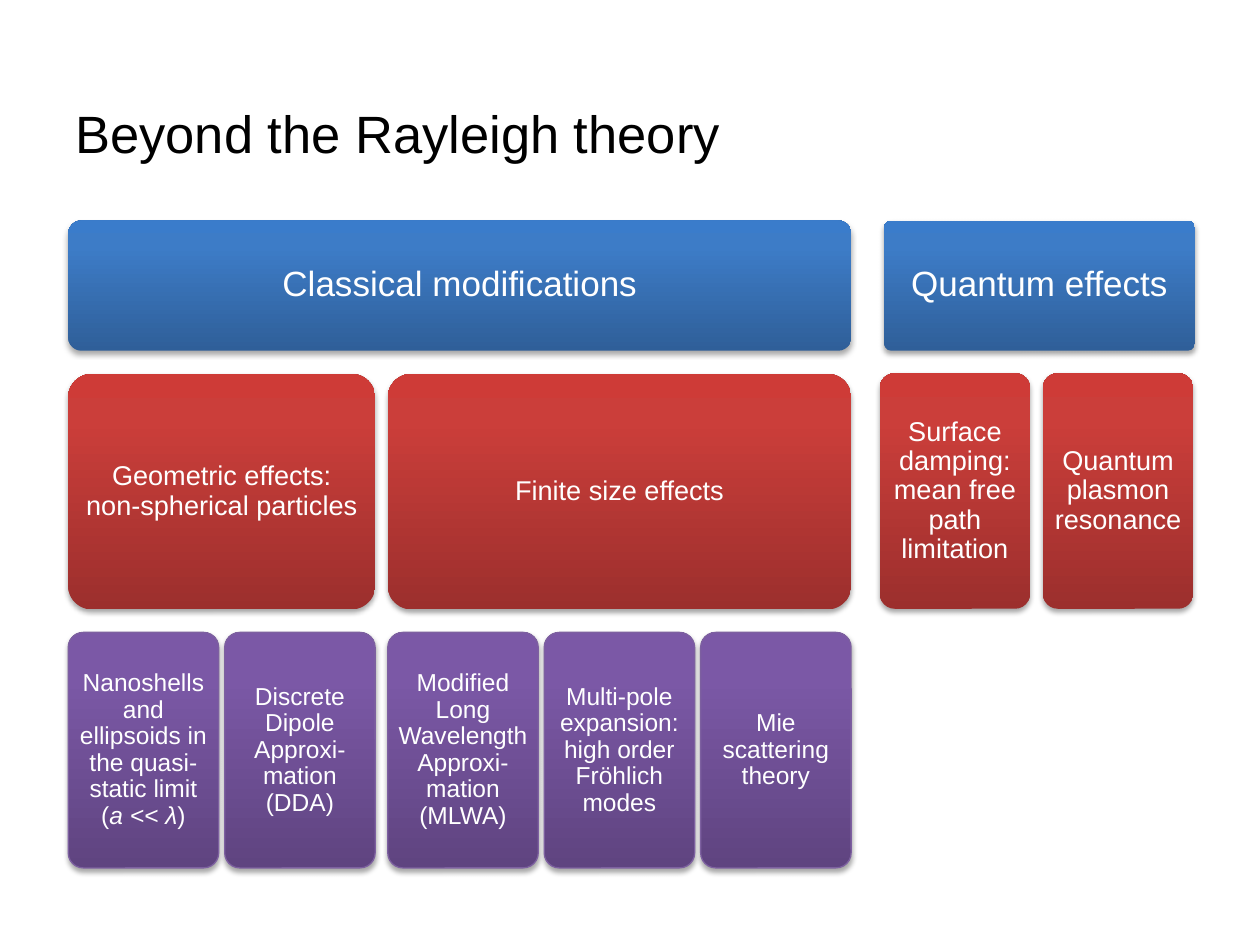
from dataclasses import dataclass
from copy import deepcopy
from lxml.etree import SubElement
from pptx import Presentation
from pptx.dml.color import RGBColor
from pptx.enum.shapes import MSO_SHAPE as Preset
from pptx.enum.text import MSO_ANCHOR as Anchor, PP_ALIGN as Align
from pptx.oxml.ns import qn
from pptx.util import Pt


@dataclass(frozen=True)
class Level:
    stops: tuple
    size: float
    margin: float
    outline: str = ""


@dataclass(frozen=True)
class Theme:
    font: str = "Arial"
    title_size: float = 30
    title_color: str = "000000"
    text_color: str = "FFFFFF"
    shadow_color: str = "000000"
    header: Level = Level(("2F5F99", "3D7CC7", "3A7CCB"), 20, 11.5)
    effect: Level = Level(("9C2F2D", "CB3E3A", "CE3B37"), 15.5, 7.9)
    narrow: Level = Level(("9C2F2D", "CB3E3A", "CE3B37"), 15.5, 6.5)
    method: Level = Level(("5F4480", "7B58A6", "7C57A8"), 14, 5.76, "7D60A0")


STOP_POSITIONS = (0, 0.8, 1)
TEXT_INSET_RATIO = 0.29


def apply(target, formats):
    for name, value in formats.items():
        setattr(target, name, value)


class HierarchySlide:
    def __init__(self, presentation, theme):
        self.theme = theme
        self.slide = presentation.slides.add_slide(presentation.slide_layouts[6])

    def label(self, shape, runs, size, color, align, margins=None, line_spacing=1.0):
        frame = shape.text_frame
        apply(frame, {"word_wrap": True, "vertical_anchor": Anchor.MIDDLE})
        apply(frame, margins or {})
        paragraph = frame.paragraphs[0]
        apply(paragraph, {"alignment": align, "line_spacing": line_spacing})
        for text, italic in runs:
            run = paragraph.add_run()
            run.text = text
            apply(run.font, {"name": self.theme.font, "size": Pt(size), "italic": italic})
            run.font.color.rgb = RGBColor.from_string(color)

    def title(self, text, left, top, width, height):
        shape = self.slide.shapes.add_textbox(Pt(left), Pt(top), Pt(width), Pt(height))
        self.label(shape, [(text, False)], self.theme.title_size,
                   self.theme.title_color, Align.LEFT)

    def gradient(self, shape, colors):
        shape.fill.gradient()
        shape.fill.gradient_angle = 90
        stop_list = next(shape._element.spPr.iter(qn("a:gsLst")))
        stop_list.append(deepcopy(stop_list[0]))
        for stop, position, color in zip(shape.fill.gradient_stops, STOP_POSITIONS, colors):
            stop.position = position
            stop.color.rgb = RGBColor.from_string(color)

    def shadow(self, shape):
        shape.shadow.inherit = False
        effects = shape._element.spPr.find(qn("a:effectLst"))
        outer = SubElement(effects, qn("a:outerShdw"), blurRad=str(Pt(3.1)),
                           dist=str(Pt(1.8)), dir="5400000", rotWithShape="0")
        color = SubElement(outer, qn("a:srgbClr"), val=self.theme.shadow_color)
        SubElement(color, qn("a:alpha"), val="35000")

    def box(self, runs, left, top, width, height, radius, level):
        shape = self.slide.shapes.add_shape(
            Preset.ROUNDED_RECTANGLE, Pt(left), Pt(top), Pt(width), Pt(height))
        shape.adjustments[0] = radius / min(width, height)
        self.gradient(shape, level.stops)
        if level.outline:
            shape.line.color.rgb = RGBColor.from_string(level.outline)
            shape.line.width = Pt(0.75)
        else:
            shape.line.fill.background()
        self.shadow(shape)
        margin = Pt(level.margin - TEXT_INSET_RATIO * radius)
        sides = ("left", "right", "top", "bottom")
        self.label(shape, runs, level.size, self.theme.text_color, Align.CENTER,
                   {f"margin_{side}": margin for side in sides}, 0.9)


def main():
    presentation = Presentation()
    apply(presentation, {"slide_width": Pt(720), "slide_height": Pt(540)})
    theme = Theme()
    page = HierarchySlide(presentation, theme)
    page.title("Beyond the Rayleigh theory", 36, 37.4, 648, 77)

    left, right = 39, 486.5
    header_top, effect_top, method_top = 126, 213.7, 361.4
    header_height, row_height = 74.4, 134.6
    method_width, method_pitch, branch_gap = 86, 89.4, 7.2
    method_radius = 8.6

    page.box([("Classical modifications", False)], left, header_top,
             right - left, header_height, 7.5, theme.header)

    branches = [
        ("Geometric effects: non-spherical particles", [
            [("Nanoshells and ellipsoids in the quasi-static limit (", False),
             ("a << λ", True), (")", False)],
            [("Discrete Dipole Approxi-mation (DDA)", False)],
        ]),
        ("Finite size effects", [
            [("Modified Long Wavelength Approxi-mation (MLWA)", False)],
            [("Multi-pole expansion: high order Fröhlich modes", False)],
            [("Mie scattering theory", False)],
        ]),
    ]
    branch_left = left
    for effect, methods in branches:
        branch_width = (len(methods) - 1) * method_pitch + method_width
        page.box([(effect, False)], branch_left, effect_top,
                 branch_width, row_height, 13.5, theme.effect)
        for index, runs in enumerate(methods):
            page.box(runs, branch_left + index * method_pitch, method_top,
                     method_width, row_height, method_radius, theme.method)
        branch_left += branch_width + branch_gap

    quantum_left, quantum_top = 502.7, 213.3
    quantum_pitch = method_width + branch_gap
    quantum_effects = ["Surface damping: mean free path limitation",
                       "Quantum plasmon resonance"]
    for index, text in enumerate(quantum_effects):
        page.box([(text, False)], quantum_left + index * quantum_pitch, quantum_top,
                 method_width, row_height, method_radius, theme.narrow)
    page.box([("Quantum effects", False)], 505.2, header_top,
             177.6, header_height, 4, theme.header)

    presentation.save("out.pptx")


if __name__ == "__main__":
    main()
